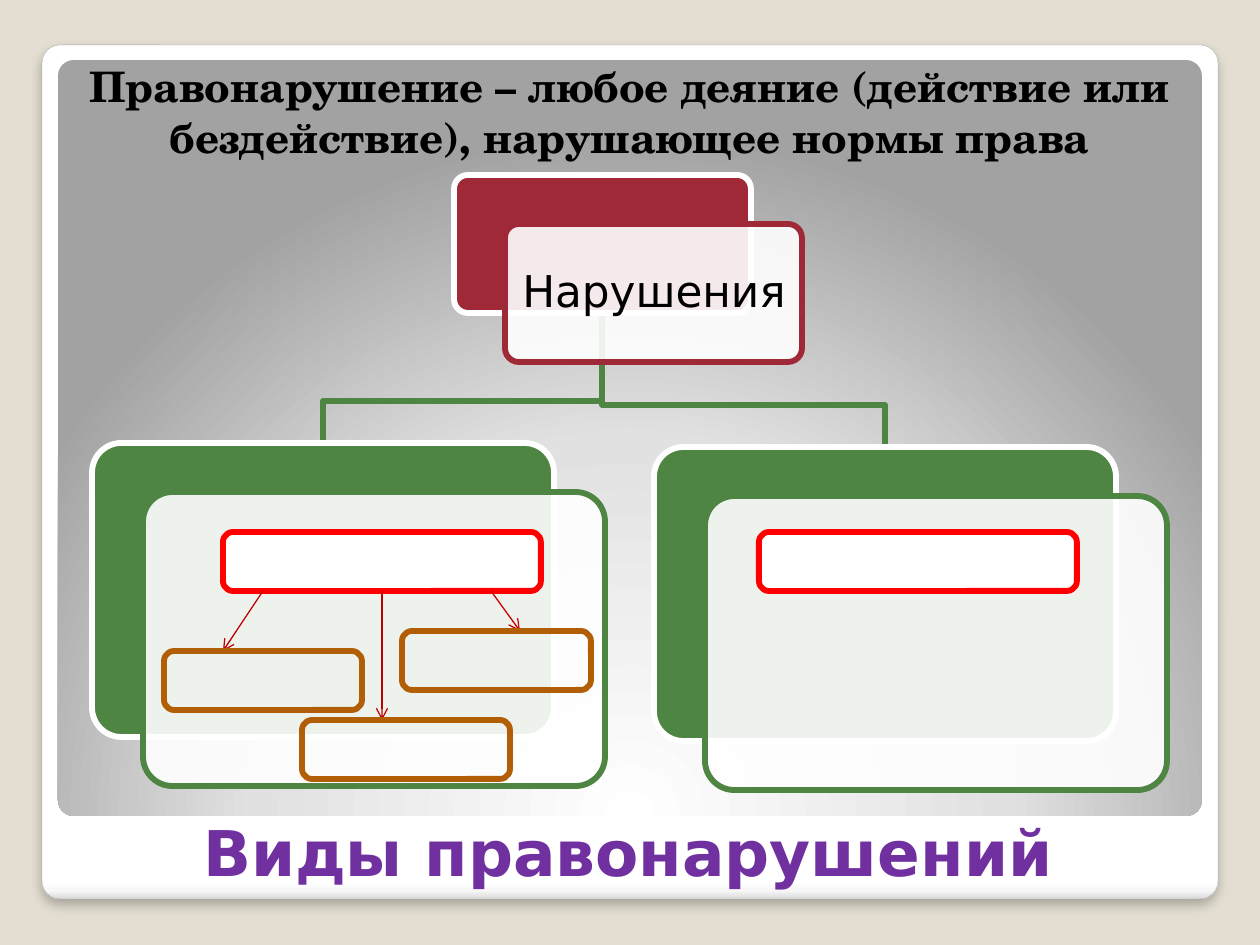
"""Builds a slide that defines an offence and charts the kinds of offences."""
from dataclasses import dataclass

from pptx import Presentation
from pptx.dml.color import RGBColor
from pptx.enum.shapes import MSO_CONNECTOR, MSO_SHAPE
from pptx.enum.text import MSO_ANCHOR, PP_ALIGN
from pptx.oxml import parse_xml
from pptx.oxml.ns import nsdecls, qn
from pptx.util import Emu, Pt


@dataclass(frozen=True)
class Theme:
    background: str = "E3DED1"
    white: str = "FFFFFF"
    black: str = "000000"
    title: str = "7030A0"
    root: str = "9F2936"
    branch: str = "4E8542"
    heading: str = "FF0000"
    detail: str = "B25E07"
    arrow: str = "C00000"
    arrow_right: str = "CC0000"
    frame_line: str = "A4A4A4"
    frame_stops: tuple = ((0, "FFFFFF"), (98, "FFFFFF"), (99, "F7F7F7"), (100, "DADADA"))
    panel_stops: tuple = ((0, "FFFFFF"), (55, "E1E1E1"), (100, "A2A2A2"))
    sans: str = "DejaVu Sans"
    serif: str = "TeX Gyre Schola"
    title_size: int = 36
    label_size: int = 25
    definition_size: int = 24
    outline: float = 3.35
    thin: float = 0.75
    hairline: float = 0.16


THEME = Theme()
LINEAR = '<a:lin ang="5400000" scaled="0"/>'
RADIAL = '<a:path path="circle"><a:fillToRect l="50000" t="175000" r="50000" b="-75000"/></a:path>'
SOFT_SHADOW = (
    f'<a:effectLst {nsdecls("a")}><a:outerShdw blurRad="76200" dist="50800" dir="5400000" '
    'algn="tl" rotWithShape="0"><a:srgbClr val="000000"><a:alpha val="25000"/>'
    '</a:srgbClr></a:outerShdw></a:effectLst>'
)


def px(length):
    return Emu(round(length * 914400 / 126))


def write_text(shape, text, *, font, size, color, bold=False, anchor=MSO_ANCHOR.TOP,
               margin=(13, 6), spacing=None):
    frame = shape.text_frame
    frame.word_wrap = True
    frame.vertical_anchor = anchor
    frame.margin_left = frame.margin_right = px(margin[0])
    frame.margin_top = frame.margin_bottom = px(margin[1])
    paragraph = frame.paragraphs[0]
    paragraph.alignment = PP_ALIGN.CENTER
    paragraph.line_spacing = spacing
    run = paragraph.add_run()
    run.text = text
    run.font.name = font
    run.font.size = Pt(size)
    run.font.bold = bold
    run.font.color.rgb = RGBColor.from_string(color)


class SlideBuilder:
    def __init__(self, presentation, theme):
        self.theme = theme
        self.slide = presentation.slides.add_slide(presentation.slide_layouts[6])
        background = self.slide.background.fill
        background.solid()
        background.fore_color.rgb = RGBColor.from_string(theme.background)

    def outline(self, shape, color, width):
        shape.line.color.rgb = RGBColor.from_string(color)
        shape.line.width = Pt(width)

    def box(self, left, top, width, height, *, fill=None, line=None, weight=None,
            corner=0.17, opacity=100):
        shape = self.slide.shapes.add_shape(
            MSO_SHAPE.ROUNDED_RECTANGLE, px(left), px(top), px(width), px(height))
        shape.shadow.inherit = False
        shape.adjustments[0] = corner
        if fill:
            shape.fill.solid()
            shape.fill.fore_color.rgb = RGBColor.from_string(fill)
        else:
            shape.fill.background()
        if opacity < 100:
            color = shape._element.spPr.find(qn("a:solidFill"))[0]
            color.append(parse_xml(f'<a:alpha {nsdecls("a")} val="{opacity * 1000}"/>'))
        if line:
            self.outline(shape, line, weight or self.theme.outline)
        else:
            shape.line.fill.background()
        return shape

    def gradient_box(self, left, top, width, height, stops, direction, **style):
        shape = self.box(left, top, width, height, corner=0.021, **style)
        shape.fill.gradient()
        properties = shape._element.spPr
        stop_list = "".join(
            f'<a:gs pos="{position * 1000}"><a:srgbClr val="{color}"/></a:gs>'
            for position, color in stops)
        properties.replace(properties.find(qn("a:gradFill")), parse_xml(
            f'<a:gradFill {nsdecls("a")} rotWithShape="1">'
            f'<a:gsLst>{stop_list}</a:gsLst>{direction}</a:gradFill>'))
        return shape

    def cast_shadow(self, shape):
        properties = shape._element.spPr
        properties.replace(properties.find(qn("a:effectLst")), parse_xml(SOFT_SHADOW))

    def card(self, left, top, width, height, color):
        self.box(left, top, width, height, fill=color, line=self.theme.white, corner=0.1)
        self.box(left + 51, top + 49, width, height, fill=self.theme.white,
                 line=color, corner=0.1, opacity=90)

    def elbow(self, start, end):
        turn = end[1] - 42
        builder = self.slide.shapes.build_freeform(px(start[0]), px(start[1]), scale=1.0)
        corners = [(start[0], turn), (end[0], turn), end]
        builder.add_line_segments([(px(x), px(y)) for x, y in corners], close=False)
        shape = builder.convert_to_shape()
        shape.shadow.inherit = False
        shape.fill.background()
        self.outline(shape, self.theme.branch, self.theme.outline)

    def arrow(self, start, end, color, source=None):
        connector = self.slide.shapes.add_connector(
            MSO_CONNECTOR.STRAIGHT, px(start[0]), px(start[1]), px(end[0]), px(end[1]))
        if source is not None:
            connector.begin_connect(source, 2)
        self.outline(connector, color, self.theme.thin)
        connector.line._get_or_add_ln().append(
            parse_xml(f'<a:tailEnd {nsdecls("a")} type="arrow"/>'))
        connector._element.spPr.append(parse_xml(f'<a:effectLst {nsdecls("a")}/>'))

    def text(self, left, top, width, height, text, **style):
        shape = self.slide.shapes.add_textbox(px(left), px(top), px(width), px(height))
        write_text(shape, text, **style)


def main():
    theme = THEME
    presentation = Presentation()
    presentation.slide_width, presentation.slide_height = px(1260), px(945)
    builder = SlideBuilder(presentation, theme)

    frame = builder.gradient_box(42, 45, 1176, 854, theme.frame_stops, LINEAR,
                                 line=theme.frame_line, weight=theme.hairline)
    builder.cast_shadow(frame)
    builder.gradient_box(58, 60, 1144, 756, theme.panel_stops, RADIAL)
    builder.text(64, 750, 1128, 145, "Виды правонарушений", font=theme.sans,
                 size=theme.title_size, color=theme.title, bold=True,
                 anchor=MSO_ANCHOR.BOTTOM)

    branches = [(92, 443), (654, 447)]
    for left, top in reversed(branches):
        builder.elbow((602, 314), (left + 231, top))
    builder.card(454, 175, 297, 138, theme.root)
    builder.text(509, 228, 290, 130, "Нарушения", font=theme.sans,
                 size=theme.label_size, color=theme.black,
                 anchor=MSO_ANCHOR.MIDDLE, margin=(6, 13), spacing=0.9)
    for left, top in branches:
        builder.card(left, top, 462, 294, theme.branch)

    builder.text(64, 55, 1131, 115,
                 "Правонарушение – любое деяние (действие или бездействие), "
                 "нарушающее нормы права",
                 font=theme.serif, size=theme.definition_size, color=theme.black, bold=True)

    headings = [builder.box(left, 532, 318, 59, fill=theme.white, line=theme.heading)
                for left in (223, 759)]
    builder.arrow((263, 591), (223, 651), theme.arrow)
    builder.arrow((491, 591), (520, 631), theme.arrow_right)
    builder.arrow((382, 591), (382, 720), theme.arrow, source=headings[0])
    for left, top, width in ((164, 651, 198), (302, 720, 208), (402, 631, 189)):
        builder.box(left, top, width, 59, line=theme.detail)

    presentation.save("out.pptx")


if __name__ == "__main__":
    main()
